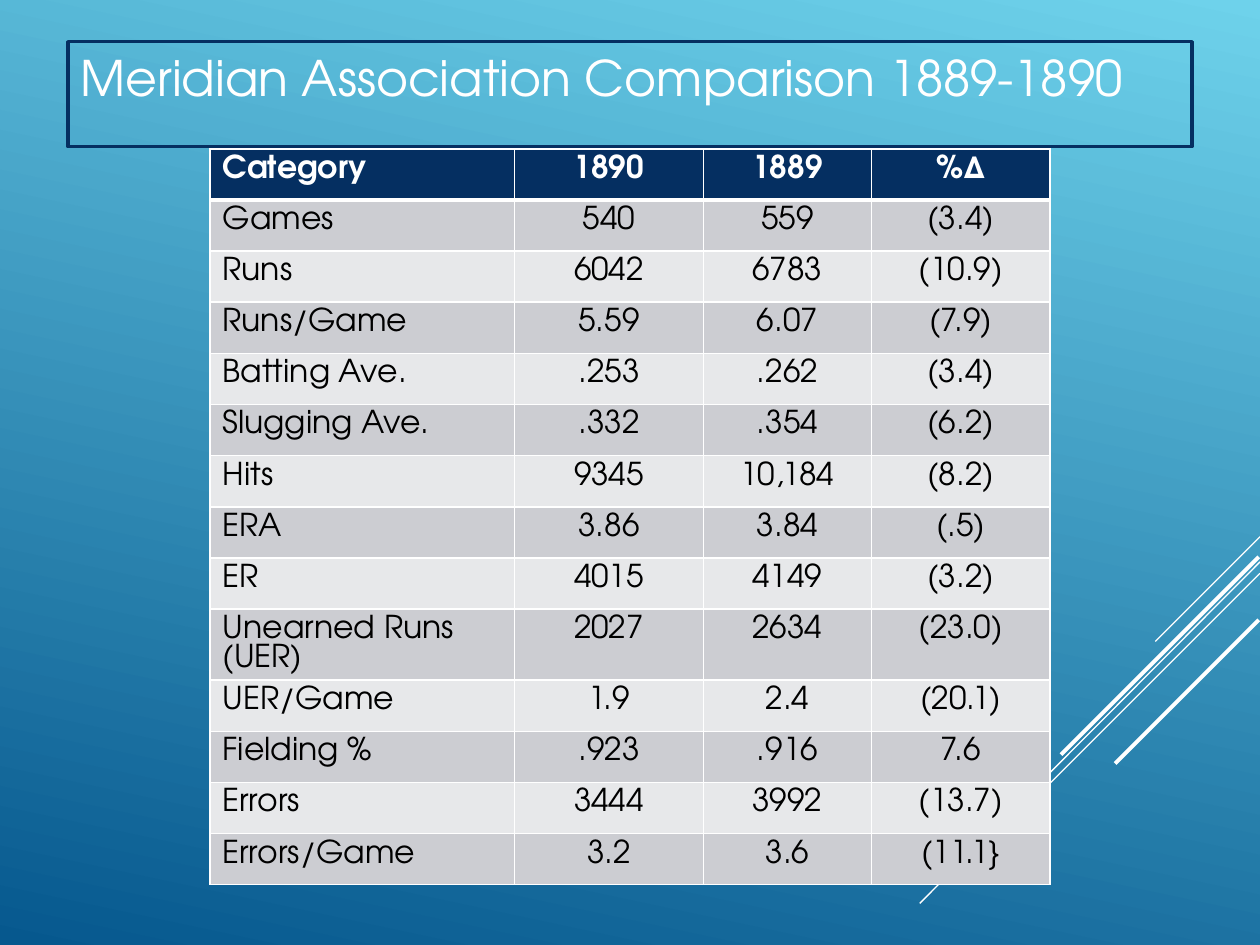
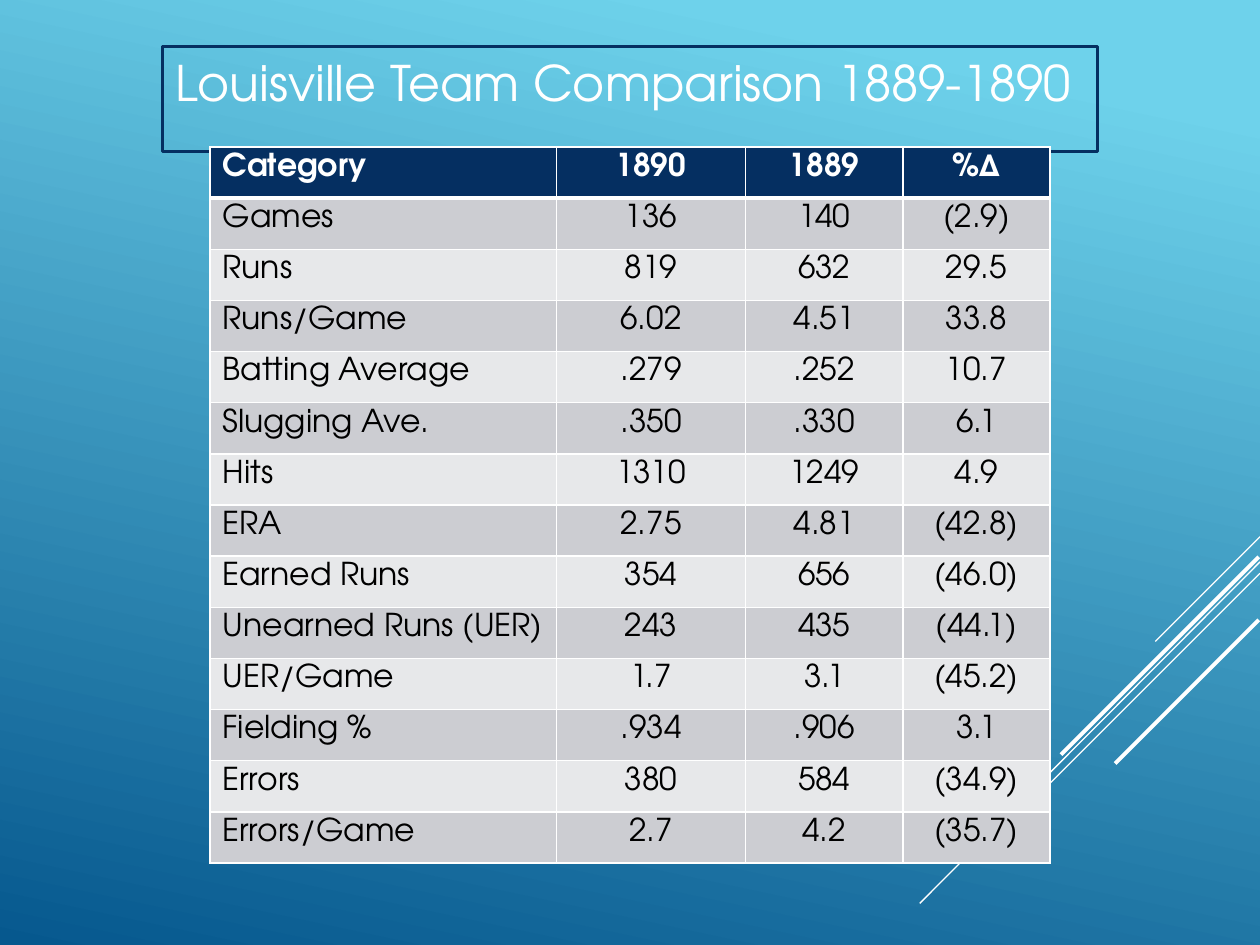
from lxml import etree
from pptx import Presentation
from pptx.dml.color import RGBColor
from pptx.enum.shapes import MSO_CONNECTOR
from pptx.enum.text import MSO_ANCHOR, MSO_AUTO_SIZE, PP_ALIGN
from pptx.oxml.ns import qn
from pptx.util import Pt

STRAIGHT = MSO_CONNECTOR.STRAIGHT
TOP = MSO_ANCHOR.TOP
GROW = MSO_AUTO_SIZE.SHAPE_TO_FIT_TEXT
LEFT, CENTER = PP_ALIGN.LEFT, PP_ALIGN.CENTER

# Shared look
FONT = "TeX Gyre Adventor"
NAVY = RGBColor(0x05, 0x2F, 0x61)
WHITE = RGBColor(0xFF, 0xFF, 0xFF)
BLACK = RGBColor(0x00, 0x00, 0x00)
SKY = RGBColor(0x6E, 0xD2, 0xEB)
OCEAN = RGBColor(0x06, 0x58, 0x8E)
BANDS = (RGBColor(0xCC, 0xCD, 0xD2), RGBColor(0xE7, 0xE8, 0xEA))

TABLE_LEFT = 120
ROW_HEIGHT = 29.25
LINE_HEIGHT = 16.7

# Diagonal streaks: start x, start y, horizontal run, vertical run, weight
STREAKS = (
    (720, 306.7, 59.8, 59.8, 0.75),
    (720, 321.1, 194.4, 195.1, 0.75),
    (720, 327.6, 123.8, 123.8, 0.75),
    (719.3, 318.2, 113, 113, 2.25),
    (719.3, 354.2, 82.1, 82.1, 2.25),
)

HEADER = ("Category", "1890", "1889", "%∆")

ASSOCIATION = (
    ("Games", "540", "559", "(3.4)"),
    ("Runs", "6042", "6783", "(10.9)"),
    ("Runs/Game", "5.59", "6.07", "(7.9)"),
    ("Batting Ave.", ".253", ".262", "(3.4)"),
    ("Slugging Ave.", ".332", ".354", "(6.2)"),
    ("Hits", "9345", "10,184", "(8.2)"),
    ("ERA", "3.86", "3.84", "(.5)"),
    ("ER", "4015", "4149", "(3.2)"),
    ("Unearned Runs (UER)", "2027", "2634", "(23.0)"),
    ("UER/Game", "1.9", "2.4", "(20.1)"),
    ("Fielding %", ".923", ".916", "7.6"),
    ("Errors", "3444", "3992", "(13.7)"),
    ("Errors/Game", "3.2", "3.6", "(11.1}"),
)

LOUISVILLE = (
    ("Games", "136", "140", "(2.9)"),
    ("Runs", "819", "632", "29.5"),
    ("Runs/Game", "6.02", "4.51", "33.8"),
    ("Batting Average", ".279", ".252", "10.7"),
    ("Slugging Ave.", ".350", ".330", "6.1"),
    ("Hits", "1310", "1249", "4.9"),
    ("ERA", "2.75", "4.81", "(42.8)"),
    ("Earned Runs", "354", "656", "(46.0)"),
    ("Unearned Runs (UER)", "243", "435", "(44.1)"),
    ("UER/Game", "1.7", "3.1", "(45.2)"),
    ("Fielding %", ".934", ".906", "3.1"),
    ("Errors", "380", "584", "(34.9)"),
    ("Errors/Game", "2.7", "4.2", "(35.7)"),
)


def write_text(frame, text, size=18, color=BLACK, bold=False, align=LEFT,
               line_height=None):
    para = frame.paragraphs[0]
    para.alignment = align
    if line_height:
        para.line_spacing = Pt(line_height)
    span = para.add_run()
    span.text = text
    span.font.name = FONT
    span.font.size = Pt(size)
    span.font.bold = bold
    span.font.color.rgb = color


def paint_background(page, sky_until):
    fill = page.background.fill
    fill.gradient()
    fill.gradient_angle = 258
    for stop, color, position in zip(fill.gradient_stops, (SKY, OCEAN), (sky_until, 1)):
        stop.color.rgb = color
        stop.position = position


def add_streaks(page):
    for x, y, run, fall, weight in STREAKS:
        streak = page.shapes.add_connector(
            STRAIGHT, Pt(x), Pt(y), Pt(x - run), Pt(y + fall))
        streak.line.color.rgb = WHITE
        streak.line.width = Pt(weight)
        etree.SubElement(streak._element.spPr, qn("a:effectLst"))


def set_title(page, text, left, top, width):
    box = page.shapes.title
    box.left, box.top, box.width, box.height = Pt(left), Pt(top), Pt(width), Pt(41.2)
    box.line.color.rgb = NAVY
    box.line.width = Pt(2)
    frame = box.text_frame
    frame.word_wrap = True
    frame.auto_size = GROW
    frame.vertical_anchor = TOP
    write_text(frame, text, size=28, color=WHITE)


def set_borders(cell, **weights):
    properties = cell._tc.get_or_add_tcPr()
    for side in "LRTB":
        border = etree.SubElement(properties, qn(f"a:ln{side}"),
                                  w=str(Pt(weights.get(side, 1))))
        fill = etree.SubElement(border, qn("a:solidFill"))
        etree.SubElement(fill, qn("a:srgbClr"), val=str(WHITE))


def add_comparison(page, records, top, widths):
    rows = (HEADER, *records)
    table = page.shapes.add_table(
        len(rows), len(widths), Pt(TABLE_LEFT), Pt(top),
        Pt(sum(widths)), Pt(ROW_HEIGHT * len(rows))).table
    for column, width in zip(table.columns, widths):
        column.width = Pt(width)
    for r, values in enumerate(rows):
        table.rows[r].height = Pt(ROW_HEIGHT)
        is_header = r == 0
        # The rule under the header is heavier
        weights = {0: {"B": 3}, 1: {"T": 3}}.get(r, {})
        for c, value in enumerate(values):
            cell = table.cell(r, c)
            set_borders(cell, **weights)
            cell.fill.solid()
            cell.fill.fore_color.rgb = NAVY if is_header else BANDS[(r - 1) % 2]
            write_text(cell.text_frame, value, bold=is_header,
                       color=WHITE if is_header else BLACK,
                       align=CENTER if c else LEFT, line_height=LINE_HEIGHT)


def add_page(deck, sky_until):
    page = deck.slides.add_slide(deck.slide_layouts[5])
    paint_background(page, sky_until)
    add_streaks(page)
    return page


def main():
    deck = Presentation()
    deck.slide_width, deck.slide_height = Pt(720), Pt(540)

    # League totals
    page = add_page(deck, sky_until=0)
    set_title(page, "Meridian Association Comparison 1889-1890", 38.9, 23.8, 642.2)
    add_comparison(page, ASSOCIATION, 85, (174, 108, 96, 102))

    # Louisville totals
    page = add_page(deck, sky_until=0.1)
    set_title(page, "Louisville Team Comparison 1889-1890", 92.9, 26.6, 534.2)
    add_comparison(page, LOUISVILLE, 84, (198, 108, 90, 84))

    deck.save("out.pptx")


if __name__ == "__main__":
    main()
